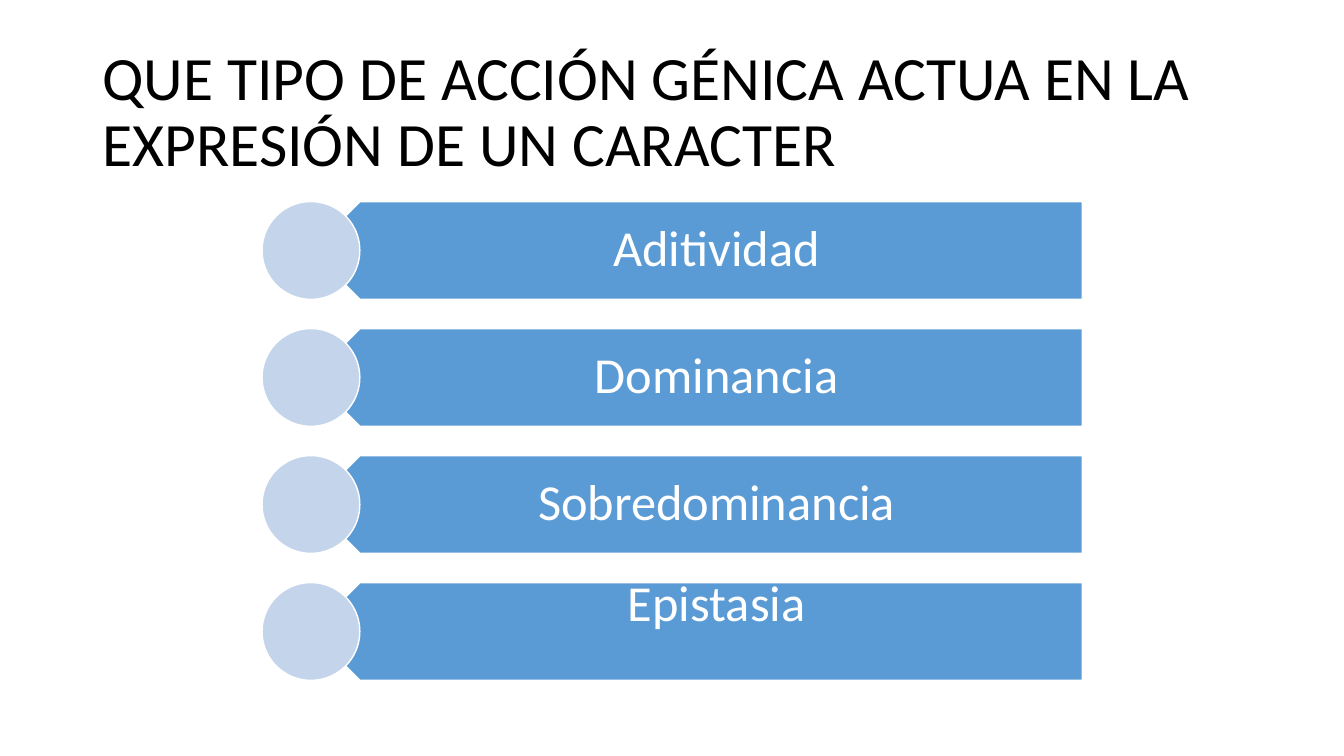
from pptx import Presentation
from pptx.dml.color import RGBColor
from pptx.enum.shapes import MSO_SHAPE
from pptx.enum.text import MSO_ANCHOR, MSO_AUTO_SIZE, PP_ALIGN
from pptx.util import Pt

BLACK = RGBColor(0x00, 0x00, 0x00)
WHITE = RGBColor(0xFF, 0xFF, 0xFF)
BAND_BLUE = RGBColor(0x5B, 0x9B, 0xD5)
CIRCLE_BLUE = RGBColor(0xC4, 0xD5, 0xEB)
PENTAGON, OVAL = MSO_SHAPE.PENTAGON, MSO_SHAPE.OVAL
MIDDLE, TOP = MSO_ANCHOR.MIDDLE, MSO_ANCHOR.TOP
LEFT, CENTER = PP_ALIGN.LEFT, PP_ALIGN.CENTER
NO_AUTOFIT = MSO_AUTO_SIZE.NONE

TITLE = "QUE TIPO DE ACCIÓN GÉNICA ACTUA EN LA EXPRESIÓN DE UN CARACTER"
GENE_ACTIONS = ["Aditividad", "Dominancia", "Sobredominancia", "Epistasia"]
FIRST_TOP, ROW_STEP, ROW_HEIGHT = 144, 90.72, 69.84
CIRCLE_LEFT, BAND_LEFT, BAND_WIDTH = 187.2, 222.3, 550.8
LABEL_LEFT, LABEL_WIDTH = 239.8, 533.3
LABEL_FRAME = {"margin_left": Pt(31), "margin_right": Pt(20),
               "margin_top": Pt(11), "margin_bottom": Pt(11),
               "vertical_anchor": MIDDLE}
RAISED_FRAME = {**LABEL_FRAME, "margin_top": Pt(0), "vertical_anchor": TOP}
RAISED_LIFT = 3


def apply_format(target, values):
    """Set every attribute named in values on target."""
    for name, value in values.items():
        setattr(target, name, value)


def write_text(shape, text, size, color, alignment, frame_format):
    """Fill a shape with one formatted paragraph."""
    frame = shape.text_frame
    frame.text = text
    apply_format(frame, {"word_wrap": True, "auto_size": NO_AUTOFIT, **frame_format})
    paragraph = frame.paragraphs[0]
    apply_format(paragraph, {"alignment": alignment, "line_spacing": 0.9})
    font = paragraph.runs[0].font
    apply_format(font, {"name": "Calibri", "size": Pt(size)})
    font.color.rgb = color


def add_title(slide):
    """Place and format the title placeholder."""
    title = slide.shapes.title
    apply_format(title, {"left": Pt(66), "top": Pt(28.75),
                         "width": Pt(828), "height": Pt(104.4)})
    write_text(title, TITLE, 44, BLACK, LEFT, {"vertical_anchor": MIDDLE})


def add_figure(slide, kind, left, top, width, color, rotation=0):
    """Add a filled row shape with a thin white outline."""
    shape = slide.shapes.add_shape(kind, Pt(left), Pt(top), Pt(width), Pt(ROW_HEIGHT))
    shape.rotation = rotation
    shape.shadow.inherit = False
    shape.fill.solid()
    shape.fill.fore_color.rgb = color
    shape.line.color.rgb = WHITE
    shape.line.width = Pt(1)


def add_row(slide, label, top, raised):
    """Add a band, its label and the circle over its point."""
    add_figure(slide, PENTAGON, BAND_LEFT, top, BAND_WIDTH, BAND_BLUE, 180)
    label_top = top - RAISED_LIFT if raised else top
    box = slide.shapes.add_textbox(Pt(LABEL_LEFT), Pt(label_top),
                                   Pt(LABEL_WIDTH), Pt(ROW_HEIGHT))
    write_text(box, label, 36, WHITE, CENTER, RAISED_FRAME if raised else LABEL_FRAME)
    add_figure(slide, OVAL, CIRCLE_LEFT, top, ROW_HEIGHT, CIRCLE_BLUE)


def main():
    """Build and save the slide."""
    presentation = Presentation()
    presentation.slide_width, presentation.slide_height = Pt(960), Pt(540)
    slide = presentation.slides.add_slide(presentation.slide_layouts[5])
    add_title(slide)
    for index, label in enumerate(GENE_ACTIONS):
        is_last = index == len(GENE_ACTIONS) - 1
        add_row(slide, label, FIRST_TOP + index * ROW_STEP, raised=is_last)
    presentation.save("out.pptx")


if __name__ == "__main__":
    main()
